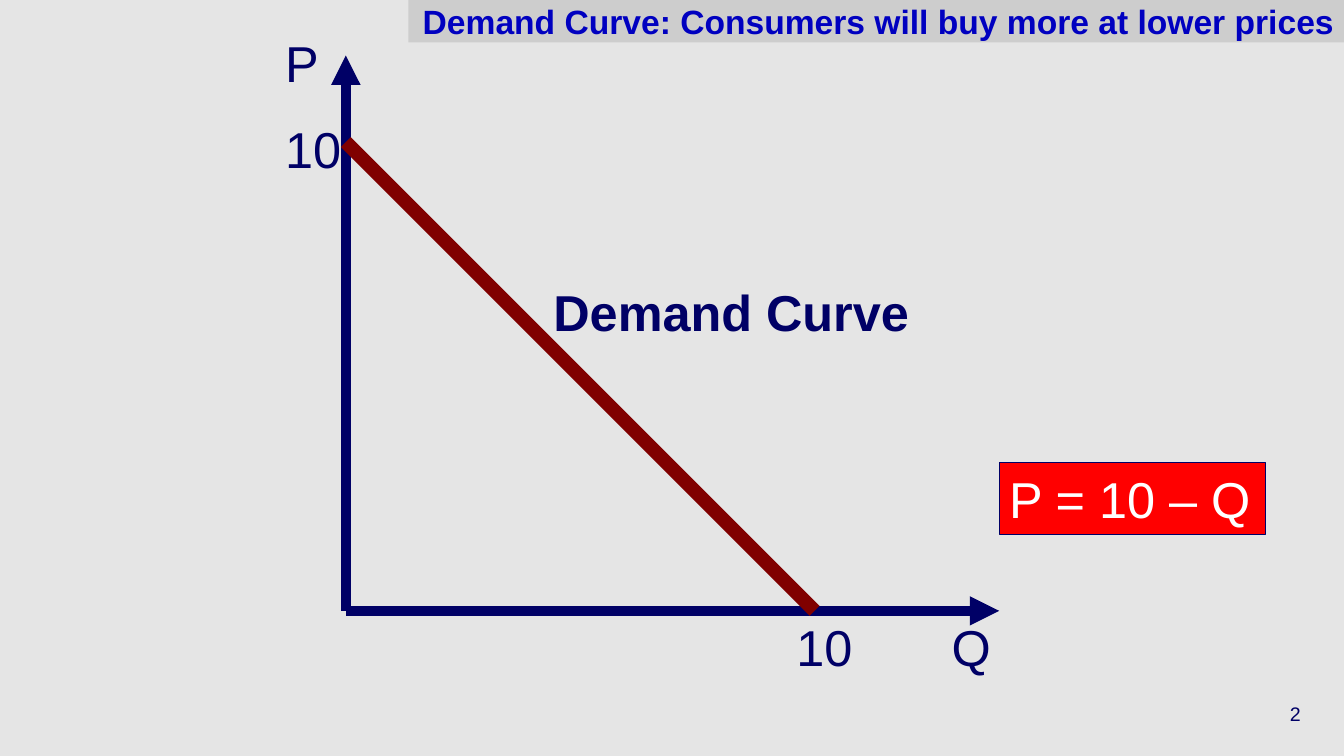
from lxml import etree
from pptx import Presentation
from pptx.dml.color import RGBColor
from pptx.enum.shapes import MSO_CONNECTOR, MSO_SHAPE
from pptx.enum.text import MSO_ANCHOR, PP_ALIGN
from pptx.oxml.ns import qn
from pptx.util import Inches, Pt

STRAIGHT = MSO_CONNECTOR.STRAIGHT
RECTANGLE = MSO_SHAPE.RECTANGLE
TOP, MIDDLE = MSO_ANCHOR.TOP, MSO_ANCHOR.MIDDLE
LEFT, RIGHT = PP_ALIGN.LEFT, PP_ALIGN.RIGHT

WIDTH, HEIGHT = 13.33, 7.5
FONT = "Arial"
NAVY, BLUE, MAROON = "000066", "0000C0", "800000"
RED, WHITE, PALE, GREY = "FF0000", "FFFFFF", "E5E5E5", "CDCDCD"
LABEL_HEIGHT = 0.71


def colour(code):
    return RGBColor.from_string(code)


def write(shape, text, size, ink, bold=False, align=LEFT, anchor=TOP, wrap=True):
    frame = shape.text_frame
    frame.word_wrap = wrap
    frame.vertical_anchor = anchor
    para = frame.paragraphs[0]
    para.alignment = align
    span = para.add_run()
    span.text = text
    span.font.name = FONT
    span.font.size = Pt(size)
    span.font.bold = bold
    span.font.color.rgb = colour(ink)


def add_panel(page, box, fill, border=None):
    panel = page.shapes.add_shape(RECTANGLE, *map(Inches, box))
    panel.shadow.inherit = False
    panel.fill.solid()
    panel.fill.fore_color.rgb = colour(fill)
    if border:
        panel.line.color.rgb = colour(border)
        panel.line.width = Pt(0.75)
    else:
        panel.line.fill.background()
    return panel


def add_label(page, box, text, size=36, **style):
    label = page.shapes.add_textbox(*map(Inches, box))
    write(label, text, size, NAVY, **style)


def add_line(page, start, end, ink, weight, arrow=False):
    line = page.shapes.add_connector(STRAIGHT, *map(Inches, start + end))
    line.line.color.rgb = colour(ink)
    line.line.width = Pt(weight)
    if arrow:
        etree.SubElement(line.line._get_or_add_ln(), qn("a:tailEnd"), type="triangle")
    etree.SubElement(line._element.spPr, qn("a:effectLst"))


def add_title(page, box):
    write(add_panel(page, box, GREY),
          "Demand Curve: Consumers will buy more at lower prices",
          24, BLUE, bold=True, align=RIGHT, anchor=MIDDLE)


def add_demand_graph(page, box):
    """Draw axes along the left and bottom edges, with P = 10 - Q between them."""
    left, top, width, height = box
    right, bottom = left + width, top + height
    intercept = 4.65
    origin = (left, bottom)
    price_limit = (left, bottom - intercept)
    quantity_limit = (left + intercept, bottom)

    add_line(page, origin, (right, bottom), NAVY, 7, arrow=True)
    add_line(page, origin, (left, top), NAVY, 7, arrow=True)
    add_line(page, price_limit, quantity_limit, MAROON, 10)

    price_left = left - 0.7
    for text, x, y, label_width in (
        ("P", price_left, top - 0.28, 0.84),
        ("10", price_left, price_limit[1] - 0.29, 0.76),
        ("10", quantity_limit[0] - 0.28, bottom, 0.76),
        ("Q", right - 0.57, bottom, 0.6),
    ):
        add_label(page, (x, y, label_width, LABEL_HEIGHT), text, wrap=False)
    add_label(page, (left + 1.96, top + 2.19, 3.97, LABEL_HEIGHT),
              "Demand Curve", bold=True)


def add_equation(page, box):
    write(add_panel(page, box, RED, NAVY), "P = 10 – Q", 36, WHITE, wrap=False)


def add_page_number(page, box):
    add_label(page, box, "2", size=14, align=RIGHT, anchor=MIDDLE)


def main():
    deck = Presentation()
    deck.slide_width, deck.slide_height = Inches(WIDTH), Inches(HEIGHT)
    page = deck.slides.add_slide(deck.slide_layouts[6])
    page.background.fill.solid()
    page.background.fill.fore_color.rgb = colour(PALE)

    add_title(page, (4.05, 0, WIDTH - 4.05, 0.42))
    add_page_number(page, (10.22, 6.83, 2.78, 0.5))
    add_equation(page, (9.91, 4.59, 2.64, LABEL_HEIGHT))
    add_demand_graph(page, (3.43, 0.55, 6.48, 5.51))
    deck.save("out.pptx")


if __name__ == "__main__":
    main()
